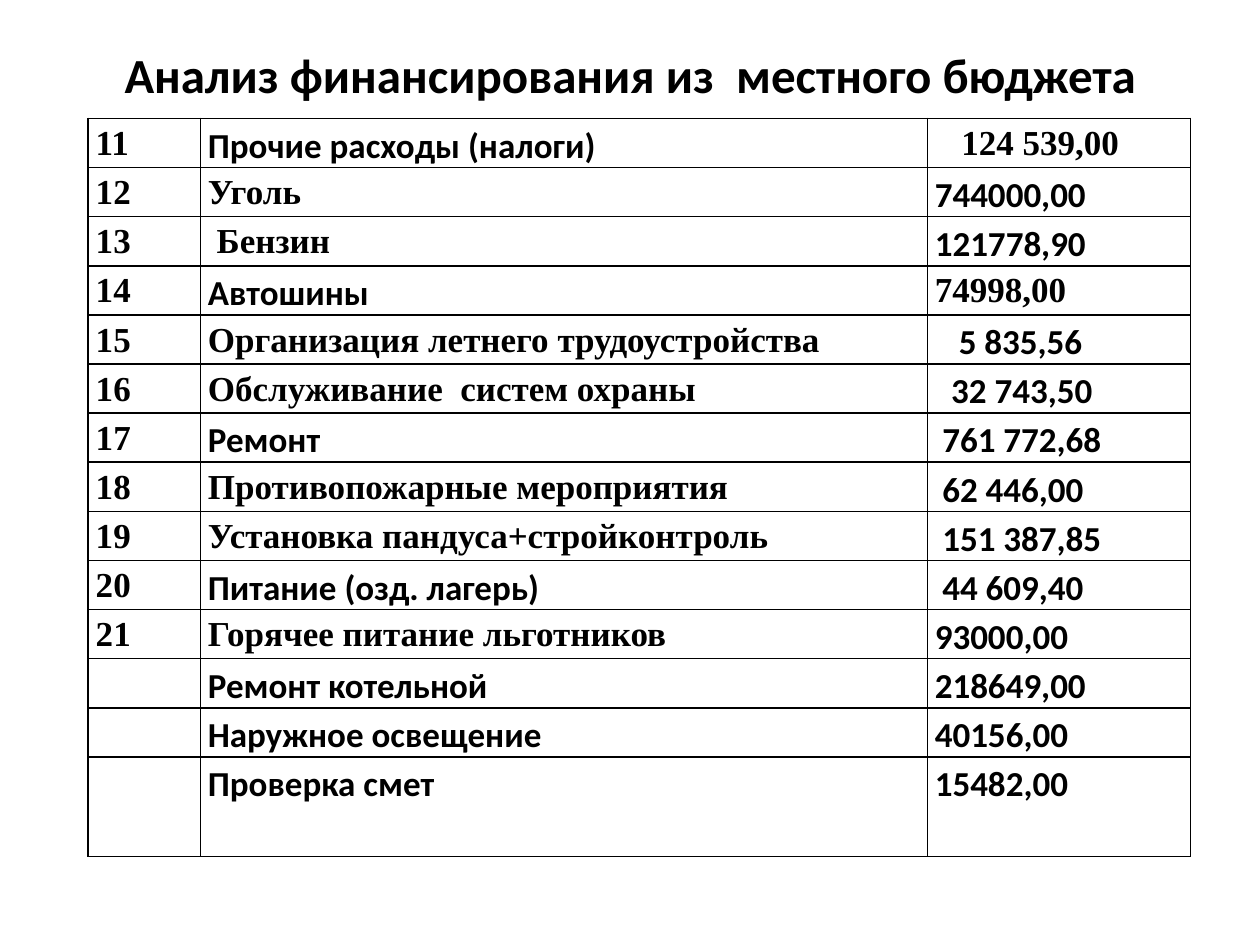
import pptx
import pptx.util
import pptx.dml.color
import pptx.enum.text
import pptx.oxml
import pptx.oxml.ns

Inches, Pt = pptx.util.Inches, pptx.util.Pt
ALIGN, ANCHOR = pptx.enum.text.PP_ALIGN, pptx.enum.text.MSO_ANCHOR
COLORS = {"ink": "000000"}
INK = pptx.dml.color.RGBColor.from_string(COLORS["ink"])
SANS, SERIF = "Calibri", "Times New Roman"
MARGIN = 0.06

# number, expense, its font, amount, its font, extra indent of the amount
EXPENSES = [
    ("11", "Прочие расходы (налоги)", SANS, "124 539,00", SERIF, 0.21),
    ("12", "Уголь", SERIF, "744000,00", SANS, 0),
    ("13", "Бензин", SERIF, "121778,90", SANS, 0),
    ("14", "Автошины", SANS, "74998,00", SERIF, 0),
    ("15", "Организация летнего трудоустройства", SERIF, "5 835,56", SANS, 0.19),
    ("16", "Обслуживание  систем охраны", SERIF, "32 743,50", SANS, 0.13),
    ("17", "Ремонт", SANS, "761 772,68", SANS, 0.06),
    ("18", "Противопожарные мероприятия", SERIF, "62 446,00", SANS, 0.06),
    ("19", "Установка пандуса+стройконтроль", SERIF, "151 387,85", SANS, 0.06),
    ("20", "Питание (озд. лагерь)", SANS, "44 609,40", SANS, 0.06),
    ("21", "Горячее питание льготников", SERIF, "93000,00", SANS, 0),
    ("", "Ремонт котельной", SANS, "218649,00", SANS, 0),
    ("", "Наружное освещение", SANS, "40156,00", SANS, 0),
    ("", "Проверка смет", SANS, "15482,00", SANS, 0),
]


def style(paragraph, font, size, align):
    paragraph.alignment = align
    paragraph.font.name = font
    paragraph.font.size = Pt(size)
    paragraph.font.bold = True
    paragraph.font.color.rgb = INK


def fill_cell(cell, text, font, align, indent):
    cell.fill.background()
    cell.margin_left, cell.margin_right = Inches(MARGIN + indent), Inches(MARGIN)
    cell.margin_top = cell.margin_bottom = 0
    cell.text = text
    paragraph = cell.text_frame.paragraphs[0]
    paragraph.line_spacing = 1.15
    style(paragraph, font, 20, align)
    borders = [
        pptx.oxml.parse_xml(
            f'<a:{side} {pptx.oxml.ns.nsdecls("a")} w="12700"><a:solidFill>'
            f'<a:srgbClr val="{COLORS["ink"]}"/></a:solidFill></a:{side}>'
        )
        for side in ("lnL", "lnR", "lnT", "lnB")
    ]
    properties = cell._tc.get_or_add_tcPr()
    for position, border in enumerate(borders):
        properties.insert(position, border)


deck = pptx.Presentation()
deck.slide_width, deck.slide_height = Inches(10), Inches(7.5)
slide = deck.slides.add_slide(deck.slide_layouts[6])

heading = slide.shapes.add_textbox(
    Inches(0.5), Inches(0.23), Inches(9), Inches(0.71)
).text_frame
heading.word_wrap = True
heading.vertical_anchor = ANCHOR.MIDDLE
heading.text = "Анализ финансирования из  местного бюджета"
style(heading.paragraphs[0], SANS, 28, ALIGN.CENTER)

budget = slide.shapes.add_table(
    len(EXPENSES), 3, Inches(0.7), Inches(0.94), Inches(8.75), Inches(5.86)
).table
budget.first_row = budget.horz_banding = False
for column, width in zip(budget.columns, (0.89, 5.77, 2.09)):
    column.width = Inches(width)
for row in budget.rows:
    row.height = Inches(0.39)
budget.rows[len(EXPENSES) - 1].height = Inches(0.79)

for r, (number, expense, expense_font, amount, amount_font, indent) in enumerate(EXPENSES):
    fill_cell(budget.cell(r, 0), number, SERIF, ALIGN.JUSTIFY, 0)
    fill_cell(budget.cell(r, 1), expense, expense_font, ALIGN.JUSTIFY,
              0.07 if expense == "Бензин" else 0)
    fill_cell(budget.cell(r, 2), amount, amount_font,
              ALIGN.JUSTIFY if r == 0 else ALIGN.LEFT, indent)

deck.save("out.pptx")
